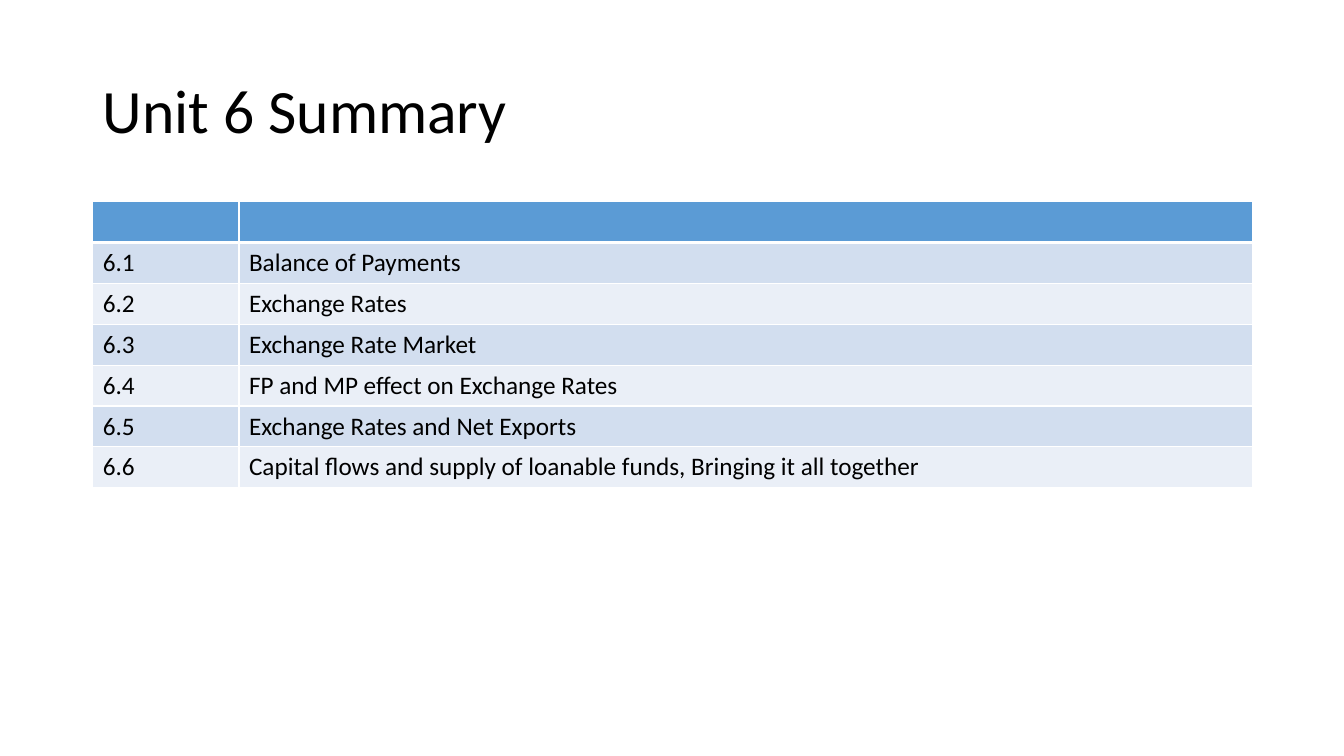
from lxml.etree import SubElement
from pptx import Presentation
from pptx.dml.color import RGBColor
from pptx.enum.text import MSO_ANCHOR, PP_ALIGN
from pptx.oxml.ns import qn
from pptx.util import Inches, Pt

TITLE = "Unit 6 Summary"
TOPICS = [
    ("6.1", "Balance of Payments"),
    ("6.2", "Exchange Rates"),
    ("6.3", "Exchange Rate Market"),
    ("6.4", "FP and MP effect on Exchange Rates"),
    ("6.5", "Exchange Rates and Net Exports"),
    ("6.6", "Capital flows and supply of loanable funds, Bringing it all together"),
]
ROWS = [("", "")] + TOPICS
COLUMN_WIDTHS = (1.45, 10.05)
LEFT, TABLE_TOP, TABLE_HEIGHT = 0.92, 2, 2.84
HEADER_FILL, BAND_FILLS = "5B9BD5", ("D2DEEF", "EAEFF7")
BORDER, TEXT = "FFFFFF", "000000"


def color(hex_code):
    return RGBColor.from_string(hex_code)


def write(frame, text, size=18, line_spacing=None):
    paragraph = frame.paragraphs[0]
    paragraph.alignment = PP_ALIGN.LEFT
    paragraph.line_spacing = line_spacing
    paragraph.font.size = Pt(size)
    if text:
        run = paragraph.add_run()
        run.text = text
        run.font.name = "Calibri"
        run.font.size = Pt(size)
        run.font.color.rgb = color(TEXT)


def add_borders(cell, top, bottom):
    """Draw all four cell borders; top and bottom are widths in points."""
    properties = cell._tc.get_or_add_tcPr()
    for side, width in (("L", 1), ("R", 1), ("T", top), ("B", bottom)):
        line = SubElement(properties, qn(f"a:ln{side}"), w=str(Pt(width)))
        fill = SubElement(line, qn("a:solidFill"))
        SubElement(fill, qn("a:srgbClr"), val=BORDER)


def add_title(slide):
    title = slide.shapes.title
    title.left, title.top = Inches(LEFT), Inches(0.4)
    title.width, title.height = Inches(sum(COLUMN_WIDTHS)), Inches(1.45)
    title.text_frame.vertical_anchor = MSO_ANCHOR.MIDDLE
    write(title.text_frame, TITLE, size=44, line_spacing=0.9)


def add_topic_table(slide):
    table = slide.shapes.add_table(
        len(ROWS), len(COLUMN_WIDTHS), Inches(LEFT), Inches(TABLE_TOP),
        Inches(sum(COLUMN_WIDTHS)), Inches(TABLE_HEIGHT)).table
    for column, width in zip(table.columns, COLUMN_WIDTHS):
        column.width = Inches(width)
    for row, texts in enumerate(ROWS):
        fill = BAND_FILLS[(row - 1) % 2] if row else HEADER_FILL
        for column, text in enumerate(texts):
            cell = table.cell(row, column)
            add_borders(cell, top=3 if row == 1 else 1, bottom=1 if row else 3)
            cell.fill.solid()
            cell.fill.fore_color.rgb = color(fill)
            write(cell.text_frame, text)


def main():
    presentation = Presentation()
    presentation.slide_width = Inches(13.33)
    presentation.slide_height = Inches(7.5)
    slide = presentation.slides.add_slide(presentation.slide_layouts[5])
    add_title(slide)
    add_topic_table(slide)
    presentation.save("out.pptx")


if __name__ == "__main__":
    main()
